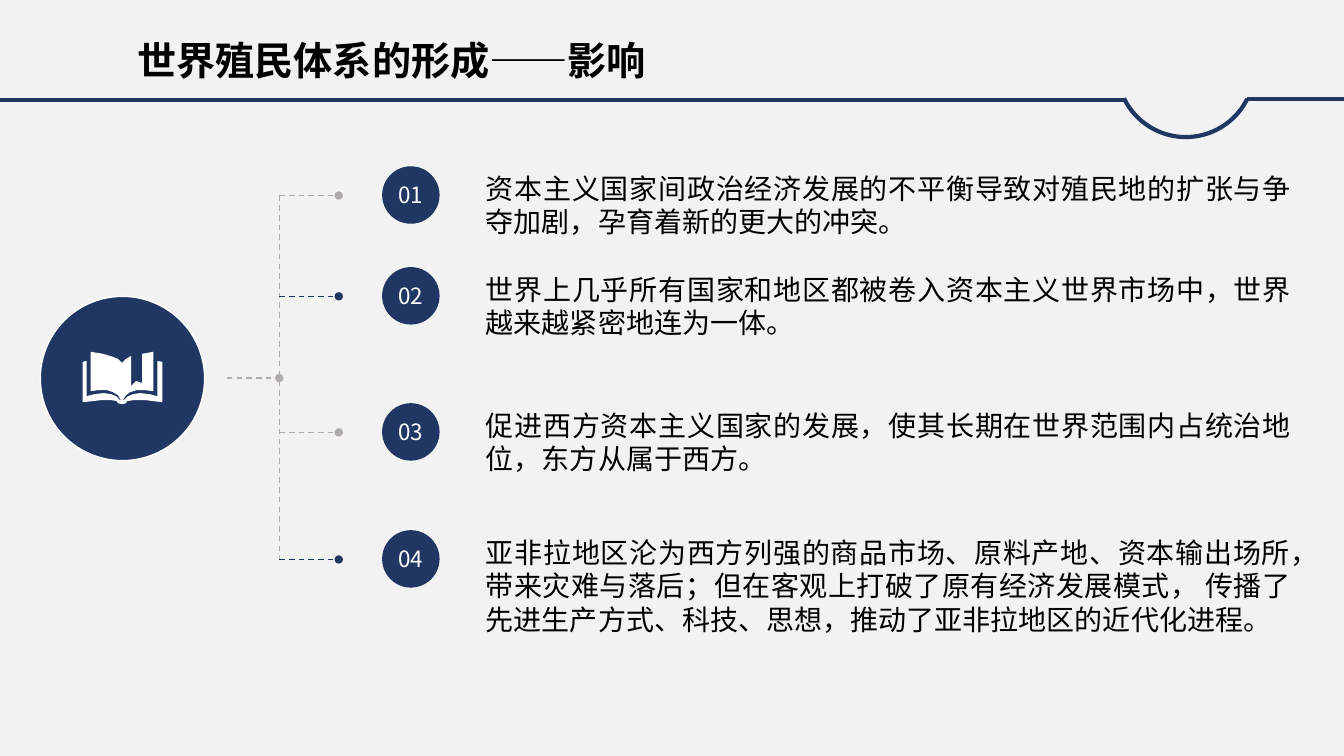
from lxml import etree
from pptx import Presentation
from pptx.dml.color import RGBColor
from pptx.enum.dml import MSO_LINE
from pptx.enum.shapes import MSO_CONNECTOR, MSO_SHAPE
from pptx.enum.text import MSO_ANCHOR, MSO_AUTO_SIZE, PP_ALIGN
from pptx.oxml.ns import qn
from pptx.util import Pt

PX = 9144  # 100 px to the inch
NAVY = RGBColor(0x1F, 0x37, 0x62)
GRAY = RGBColor(0xAF, 0xAB, 0xAB)
PALE = RGBColor(0xF2, 0xF2, 0xF2)
WHITE = RGBColor(0xFF, 0xFF, 0xFF)
BLACK = RGBColor(0, 0, 0)

DASH = MSO_LINE.DASH
STRAIGHT = MSO_CONNECTOR.STRAIGHT
OVAL, ARC = MSO_SHAPE.OVAL, MSO_SHAPE.ARC
LEFT, CENTER, JUSTIFY = PP_ALIGN.LEFT, PP_ALIGN.CENTER, PP_ALIGN.JUSTIFY
MIDDLE = MSO_ANCHOR.MIDDLE
GROW, FIXED = MSO_AUTO_SIZE.SHAPE_TO_FIT_TEXT, MSO_AUTO_SIZE.NONE

TITLE = "世界殖民体系的形成——影响"
# top, text height, branch colour, text
POINTS = [
    (165, 77, GRAY, "资本主义国家间政治经济发展的不平衡导致对殖民地的扩张与争夺加剧，孕育着新的更大的冲突。"),
    (265, 77, NAVY, "世界上几乎所有国家和地区都被卷入资本主义世界市场中，世界越来越紧密地连为一体。"),
    (400, 77, GRAY, "促进西方资本主义国家的发展，使其长期在世界范围内占统治地位，东方从属于西方。"),
    (526, 111, NAVY, "亚非拉地区沦为西方列强的商品市场、原料产地、资本输出场所，带来灾难与落后；"
                     "但在客观上打破了原有经济发展模式， 传播了先进生产方式、科技、思想，"
                     "推动了亚非拉地区的近代化进程。"),
]
BOOK = [
    (116, 398), (117, 400), (121, 401), (125, 400), (126, 398), (132, 397),
    (145, 397), (161, 399), (161, 359), (156, 358), (156, 393), (148, 391),
    (139, 390), (132, 391), (127, 393), (123, 397), (122, 397), (125, 392),
    (129, 389), (136, 387), (144, 387), (152, 388), (152, 349), (141, 351),
    (141, 380), (135, 378), (130, 383), (130, 353), (125, 356), (121, 360),
    (117, 356), (112, 354), (102, 351), (90, 349), (90, 388), (98, 387),
    (106, 387), (112, 389), (117, 392), (120, 397), (119, 397), (115, 393),
    (110, 391), (103, 390), (94, 391), (86, 393), (86, 358), (82, 359),
    (82, 399), (100, 397), (111, 397),
]


class Deck:
    """Style and current slide; every length is in px."""

    font = "Noto Sans CJK SC"

    def __init__(self, wide, high):
        self.prs = Presentation()
        self.prs.slide_width, self.prs.slide_height = wide * PX, high * PX
        self.slide = self.prs.slides.add_slide(self.prs.slide_layouts[5])
        self.shapes = self.slide.shapes
        fill = self.slide.background.fill
        fill.solid()
        fill.fore_color.rgb = PALE

    def label(self, frame, text, size, color, align, bold=False):
        frame.word_wrap = True
        para = frame.paragraphs[0]
        para.text = text
        para.alignment = align
        font = para.font
        font.size, font.bold, font.name = Pt(size), bold, self.font
        font.color.rgb = color
        face = etree.SubElement(para._p.pPr.find(qn("a:defRPr")), qn("a:ea"))
        face.set("typeface", self.font)
        return para

    def title(self, text, x, y, w, h):
        box = self.shapes.title
        box.left, box.top, box.width, box.height = (v * PX for v in (x, y, w, h))
        frame = box.text_frame
        frame.auto_size, frame.vertical_anchor = FIXED, MIDDLE
        self.label(frame, text, 28, BLACK, LEFT, True).line_spacing = 0.9

    def text(self, text, x, y, w, h):
        box = self.shapes.add_textbox(x * PX, y * PX, w * PX, h * PX)
        self.label(box.text_frame, text, 20, BLACK, JUSTIFY)
        box.text_frame.auto_size = GROW

    def paint(self, shape, fill=None, line=None, width=1):
        shape.shadow.inherit = False
        for part, color in ((shape.fill, fill), (shape.line.fill, line)):
            if color is None:
                part.background()
            else:
                part.solid()
                part.fore_color.rgb = color
        if line is not None:
            shape.line.width = Pt(width)

    def disc(self, x, y, size, line=None, text=None):
        disc = self.shapes.add_shape(OVAL, x * PX, y * PX, size * PX, size * PX)
        self.paint(disc, NAVY, line)
        if text:
            frame = disc.text_frame
            frame.margin_left = frame.margin_right = 0
            frame.margin_top = frame.margin_bottom = 0
            frame.vertical_anchor = MIDDLE
            self.label(frame, text, 16, WHITE, CENTER)

    def arc(self, x, y, size, turn, start, end):
        arc = self.shapes.add_shape(ARC, x * PX, y * PX, size * PX, size * PX)
        arc.rotation = turn
        for i, angle in enumerate((start, end)):
            arc.adjustments[i] = angle * 0.6  # 60000 units to the degree
        self.paint(arc, None, NAVY, 3)

    def line(self, x1, y1, x2, y2, color, width=1, dash=None, dot=False):
        link = self.shapes.add_connector(STRAIGHT, x1 * PX, y1 * PX, x2 * PX, y2 * PX)
        link.line.color.rgb, link.line.width = color, Pt(width)
        if dash:
            link.line.dash_style = dash
        if dot:
            edge = link._element.spPr.find(qn("a:ln"))
            etree.SubElement(edge, qn("a:tailEnd")).set("type", "oval")
        etree.SubElement(link._element.spPr, qn("a:effectLst"))

    def outline(self, dots, fill):
        pen = self.shapes.build_freeform(*dots[0], scale=PX)
        pen.add_line_segments(dots[1:], close=True)
        self.paint(pen.convert_to_shape(), fill)


def main():
    deck = Deck(1333, 750)

    # Title and header rule with its dip
    deck.title(TITLE, 126, 19, 1218, 86)
    deck.arc(1108, 0, 136, 153, 233.15, 1.28)
    deck.line(1115, 99, 0, 99, NAVY, 3)
    deck.line(1237, 98, 1333, 98, NAVY, 3)

    # Book badge
    deck.disc(40, 294, 163, line=WHITE)
    deck.outline(BOOK, WHITE)

    # Trunk of the tree
    trunk = 277
    deck.line(trunk, 194, trunk, 556, GRAY, dash=DASH)
    deck.line(225, 375, trunk, 375, GRAY, dash=DASH, dot=True)

    # Branches with numbers and texts
    for i, (top, high, color, text) in enumerate(POINTS, 1):
        mid = top + 29
        deck.line(trunk, mid, 336, mid, color, dash=DASH, dot=True)
        deck.disc(379, top, 57, text=f"{i:02}")
        deck.text(text, 472, top, 818, high)

    deck.prs.save("out.pptx")


if __name__ == "__main__":
    main()
